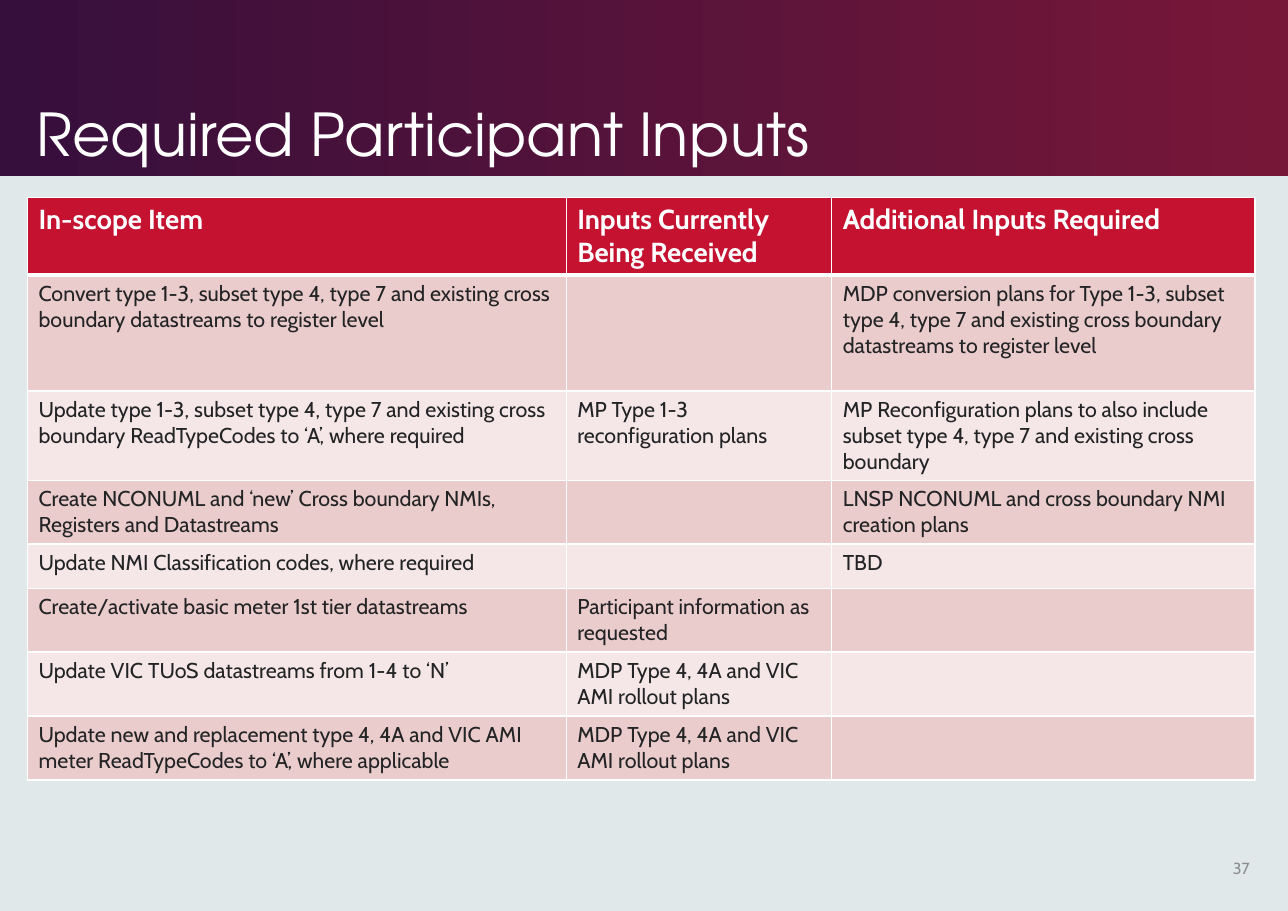
from lxml.etree import SubElement
from pptx import Presentation
from pptx.dml.color import RGBColor
from pptx.enum.shapes import MSO_SHAPE
from pptx.enum.text import MSO_ANCHOR, PP_ALIGN
from pptx.oxml.ns import qn
from pptx.util import Inches, Pt

COLOURS = {
    "background": "E0E8EA", "banner_left": "360F3C", "banner_right": "771738",
    "white": "FFFFFF", "header": "C41230", "odd_row": "EACCCD",
    "even_row": "F5E7E8", "body": "222324", "page_number": "8D8D8E",
}
BODY_FONT, TITLE_FONT = "Cabin", "TeX Gyre Adventor"
SLIDE_WIDTH, SLIDE_HEIGHT = 11.69, 8.27

COLUMN_WIDTHS = [4.89, 2.41, 3.84]
ROW_HEIGHTS = [0.71, 1.05, 0.81, 0.58, 0.4, 0.58, 0.58, 0.58]
INPUT_ROWS = [
    ("In-scope Item", "Inputs Currently Being Received", "Additional Inputs Required"),
    ("Convert type 1-3, subset type 4, type 7 and existing cross boundary datastreams to register level",
     "",
     "MDP conversion plans for Type 1-3, subset type 4, type 7 and existing cross boundary "
     "datastreams to register level"),
    ("Update type 1-3, subset type 4, type 7 and existing cross boundary ReadTypeCodes to ‘A’, where required",
     "MP Type 1-3 reconfiguration plans",
     "MP Reconfiguration plans to also include subset type 4, type 7 and existing cross boundary"),
    ("Create NCONUML and ‘new’ Cross boundary NMIs, Registers and Datastreams",
     "",
     "LNSP NCONUML and cross boundary NMI creation plans"),
    ("Update NMI Classification codes, where required", "", "TBD"),
    ("Create/activate basic meter 1st tier datastreams", "Participant information as requested", ""),
    ("Update VIC TUoS datastreams from 1-4 to ‘N’", "MDP Type 4, 4A and VIC AMI rollout plans", ""),
    ("Update new and replacement type 4, 4A and VIC AMI meter ReadTypeCodes to ‘A’, where applicable",
     "MDP Type 4, 4A and VIC AMI rollout plans", ""),
]


def colour(name):
    return RGBColor.from_string(COLOURS[name])


def write(frame, text, size, colour_name, font=BODY_FONT, bold=False):
    frame.text = text
    paragraph = frame.paragraphs[0]
    for target in (paragraph, *paragraph.runs):
        target.font.size = Pt(size)
        target.font.name = font
        target.font.bold = bold
        target.font.color.rgb = colour(colour_name)
    return paragraph


def add_text(slide, box, anchor, *text_style):
    frame = slide.shapes.add_textbox(*map(Inches, box)).text_frame
    frame.word_wrap = True
    frame.vertical_anchor = anchor
    return write(frame, *text_style)


def add_banner(slide, left, top, width, height):
    banner = slide.shapes.add_shape(
        MSO_SHAPE.RECTANGLE, *map(Inches, (left, top, width, height)))
    banner.shadow.inherit = False
    banner.line.fill.background()
    banner.fill.gradient()
    banner.fill.gradient_angle = 0
    for stop, name in zip(banner.fill.gradient_stops, ("banner_left", "banner_right")):
        stop.color.rgb = colour(name)

    title_box = (left + 0.23, top + 0.16, width - 1.8, height - 0.17)
    title = add_text(slide, title_box, MSO_ANCHOR.BOTTOM,
                     "Required Participant Inputs", 38.6, "white", TITLE_FONT)
    title.line_spacing = 0.9


def set_borders(cell, bottom_width):
    properties = cell._tc.get_or_add_tcPr()
    widths = {"a:lnL": 1, "a:lnR": 1, "a:lnT": 1, "a:lnB": bottom_width}
    for side, width in widths.items():
        line = SubElement(properties, qn(side), w=str(Pt(width)))
        fill = SubElement(line, qn("a:solidFill"))
        SubElement(fill, qn("a:srgbClr"), val=COLOURS["white"])


def add_inputs_table(slide, left, top):
    box = (left, top, sum(COLUMN_WIDTHS), sum(ROW_HEIGHTS))
    table = slide.shapes.add_table(
        len(INPUT_ROWS), len(COLUMN_WIDTHS), *map(Inches, box)).table
    for column, width in zip(table.columns, COLUMN_WIDTHS):
        column.width = Inches(width)

    for index, (row, height, texts) in enumerate(zip(table.rows, ROW_HEIGHTS, INPUT_ROWS)):
        row.height = Inches(height)
        is_header = index == 0
        row_fill = "header" if is_header else "odd_row" if index % 2 else "even_row"
        for cell, text in zip(row.cells, texts):
            # Borders come before the fill in the cell properties
            set_borders(cell, 3 if is_header or False else 1)
            cell.fill.solid()
            cell.fill.fore_color.rgb = colour(row_fill)
            if is_header:
                write(cell.text_frame, text, 18, "white", bold=True)
            else:
                write(cell.text_frame, text, 14, "body")


def add_page_number(slide, *box):
    number = add_text(slide, box, MSO_ANCHOR.MIDDLE, "37", 10.5, "page_number")
    number.alignment = PP_ALIGN.RIGHT


def main():
    presentation = Presentation()
    presentation.slide_width = Inches(SLIDE_WIDTH)
    presentation.slide_height = Inches(SLIDE_HEIGHT)
    slide = presentation.slides.add_slide(presentation.slide_layouts[6])
    slide.background.fill.solid()
    slide.background.fill.fore_color.rgb = colour("background")

    add_banner(slide, 0, 0, SLIDE_WIDTH, 1.6)
    add_inputs_table(slide, 0.25, 1.79)
    add_page_number(slide, 10.89, 7.66, 0.55, 0.44)
    presentation.save("out.pptx")


if __name__ == "__main__":
    main()
